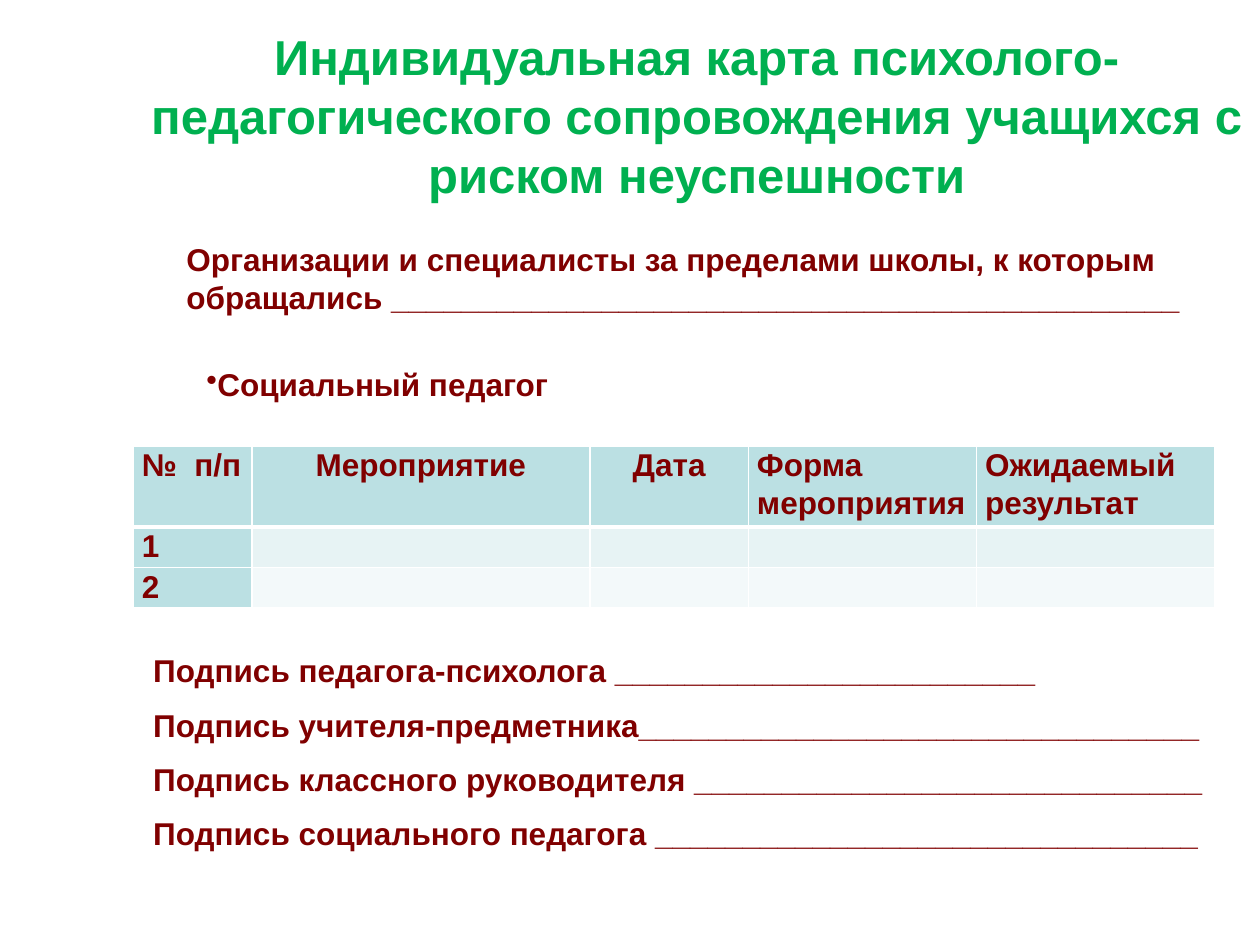
from lxml import etree
from pptx import Presentation
from pptx import util as u
from pptx.dml.color import RGBColor
from pptx.enum import text
from pptx.oxml import ns

COLORS = {"title": "00B050", "body": "800000", "border": "FFFFFF",
          "head": "BBE0E3", "band1": "E7F3F4", "band2": "F3F9FA"}
BODY = {"name": "Arial", "size": u.Pt(18), "bold": True}
TITLE = {**BODY, "size": u.Pt(28)}
LEFT, CENTER = text.PP_ALIGN.LEFT, text.PP_ALIGN.CENTER
TOP, MIDDLE = text.MSO_ANCHOR.TOP, text.MSO_ANCHOR.MIDDLE


def write(p, line, font=BODY, color="body", **layout):
    """Add one formatted run; layout holds paragraph attributes."""
    for name, value in layout.items():
        setattr(p, name, value)
    r = p.add_run()
    r.text = line
    for name, value in font.items():
        setattr(r.font, name, value)
    r.font.color.rgb = RGBColor.from_string(COLORS[color])


def add_border(cell, side, width):
    ln = etree.SubElement(cell._tc.get_or_add_tcPr(), ns.qn(f"a:ln{side}"),
                          w=str(u.Pt(width)))
    fill = etree.SubElement(ln, ns.qn("a:solidFill"))
    etree.SubElement(fill, ns.qn("a:srgbClr"), val=COLORS["border"])


prs = Presentation()
prs.slide_width, prs.slide_height = u.Cm(25.4), u.Cm(19.05)
s = prs.slides.add_slide(prs.slide_layouts[6])

# Text boxes: left, top, width, height, anchor
boxes = {
    "title": (2.69, 1.32, 22.71, 3.18, MIDDLE),
    "contacts": (3.51, 4.72, 21.01, 1.8, TOP),
    "teacher": (3.91, 7.24, 17.65, 1.02, MIDDLE),
    "signatures": (2.84, 12.95, 21.67, 4.39, TOP),
}
frames = {}
for name, (*place, anchor) in boxes.items():
    tf = s.shapes.add_textbox(*map(u.Cm, place)).text_frame
    tf.word_wrap = True
    tf.vertical_anchor = anchor
    frames[name] = tf

frames["title"].margin_bottom = u.Cm(1.31)  # lifts the heading above centre
write(frames["title"].paragraphs[0],
      "Индивидуальная карта психолого-педагогического сопровождения "
      "учащихся с риском неуспешности", TITLE, "title", alignment=CENTER)

write(frames["contacts"].paragraphs[0],
      "Организации и специалисты за пределами школы, к которым обращались "
      + "_" * 45)

p = frames["teacher"].paragraphs[0]
pPr = p._p.get_or_add_pPr()
pPr.set("marL", "0")
pPr.set("indent", "0")
etree.SubElement(pPr, ns.qn("a:buChar"), char="•")
write(p, "Социальный педагог")

signatures = [("педагога-психолога ", 24), ("учителя-предметника", 32),
              ("классного руководителя ", 29), ("социального педагога ", 31)]
tf = frames["signatures"]
for i, (who, blanks) in enumerate(signatures):
    p = tf.add_paragraph() if i else tf.paragraphs[0]
    write(p, f"Подпись {who}" + "_" * blanks,
          line_spacing=1.07, space_after=u.Pt(8))

# Table of activities
widths = [2.39, 6.81, 3.2, 4.6, 4.8]
heights = [1.62, 0.81, 0.81]
rows = [["№  п/п", "Мероприятие", "Дата", "Форма мероприятия",
         "Ожидаемый результат"],
        ["1", "", "", "", ""],
        ["2", "", "", "", ""]]
margins = {"margin_left": u.Cm(0.17), "margin_right": u.Cm(0.17),
           "margin_top": 0, "margin_bottom": 0}
table = s.shapes.add_table(len(rows), len(widths), u.Cm(2.69), u.Cm(8.99),
                           u.Cm(sum(widths)), u.Cm(sum(heights))).table
for col, width in zip(table.columns, widths):
    col.width = u.Cm(width)
for i, (row, height) in enumerate(zip(rows, heights)):
    table.rows[i].height = u.Cm(height)
    for j, label in enumerate(row):
        cell = table.cell(i, j)
        for name, value in margins.items():
            setattr(cell, name, value)
        for side in "LRTB":
            thick = (i, side) in ((0, "B"), (1, "T"))
            add_border(cell, side, 3 if thick else 1)
        cell.fill.solid()
        color = "head" if i == 0 or j == 0 else f"band{i}"
        cell.fill.fore_color.rgb = RGBColor.from_string(COLORS[color])
        if label:
            write(cell.text_frame.paragraphs[0], label, line_spacing=1.07,
                  alignment=CENTER if j in (1, 2) else LEFT)

prs.save("out.pptx")
